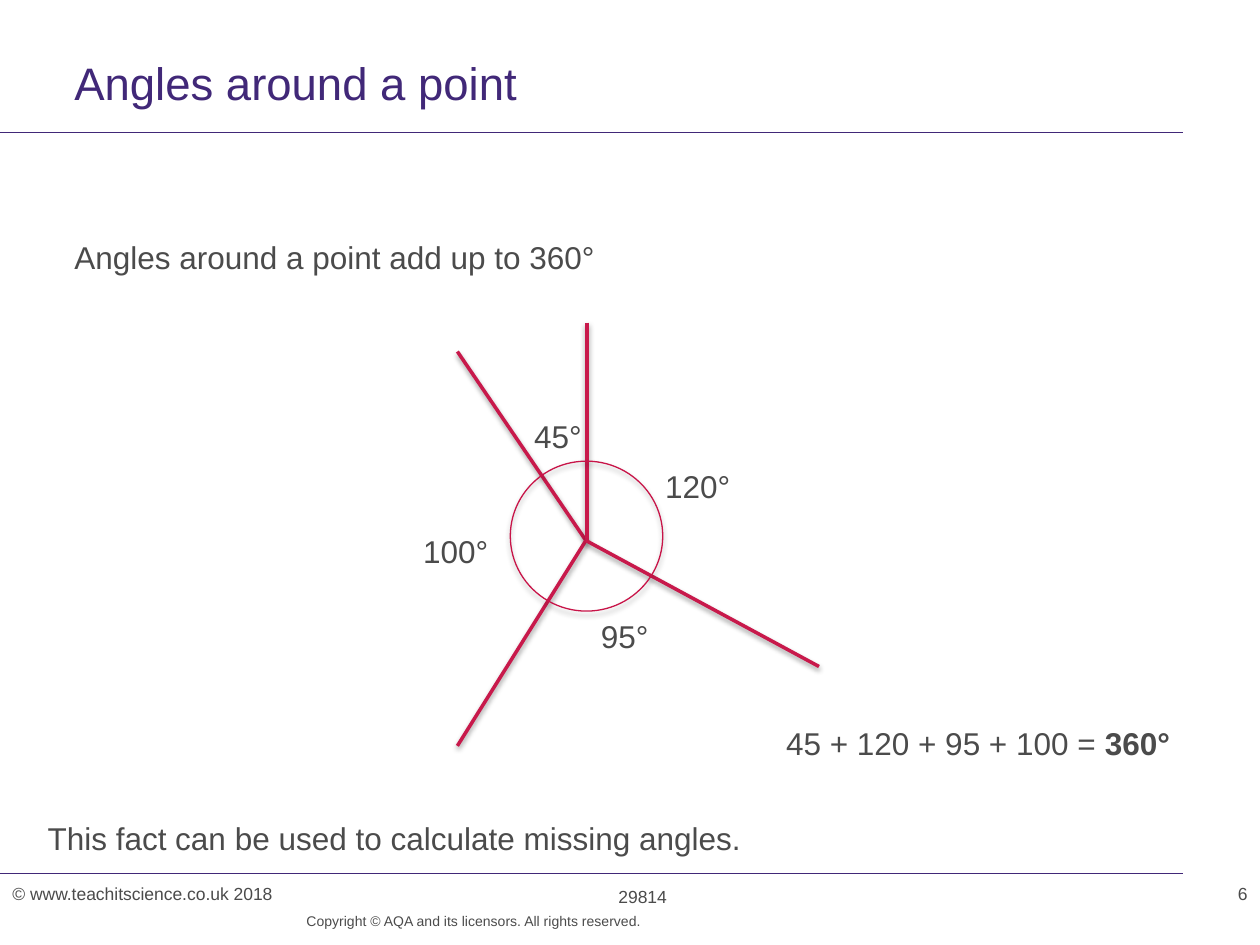
from dataclasses import dataclass

from lxml.etree import SubElement
from pptx import Presentation
from pptx.dml.color import RGBColor
from pptx.enum.shapes import MSO_CONNECTOR as CONN, MSO_SHAPE as SHAPE
from pptx.enum.text import MSO_ANCHOR as ANCHOR, PP_ALIGN as AL
from pptx.oxml.ns import qn
from pptx.util import Emu, Pt

PX = 9144  # 100 px to the inch
FONT = "Arial"
COLORS = {"purple": "412878", "grey": "4B4B4B", "ray": "C8194B",
          "circle": "C81448", "shadow": "000000"}


@dataclass
class Label:
    text: str
    x: int
    y: int
    w: int
    h: int
    size: int = 18
    color: str = "grey"
    align: AL = AL.LEFT
    wrap: bool = True
    insets: tuple[int, int, int, int] = (10, 5, 10, 5)
    spacing: int | None = None
    bold_tail: str = ""


@dataclass
class Line:
    x1: int
    y1: int
    x2: int
    y2: int
    color: str
    width: float
    shadow: bool = False


def px(n: int) -> Emu:
    return Emu(n * PX)


def rgb(name: str) -> RGBColor:
    return RGBColor.from_string(COLORS[name])


def add_effects(sp, shadow: bool, alpha: int = 38, dist: float = 1.6) -> None:
    """Write the effect list: a downward soft shadow, or none."""
    fx = SubElement(sp._element.spPr, qn("a:effectLst"))
    if shadow:
        outer = SubElement(fx, qn("a:outerShdw"), blurRad=str(Pt(3.1)),
                           dist=str(Pt(dist)), dir="5400000", rotWithShape="0")
        clr = SubElement(outer, qn("a:srgbClr"), val=COLORS["shadow"])
        SubElement(clr, qn("a:alpha"), val=str(alpha * 1000))


def draw_line(s, ln: Line) -> None:
    c = s.shapes.add_connector(CONN.STRAIGHT, px(ln.x1), px(ln.y1),
                               px(ln.x2), px(ln.y2))
    c.line.color.rgb = rgb(ln.color)
    c.line.width = Pt(ln.width)
    add_effects(c, ln.shadow)


def draw_label(s, lb: Label) -> None:
    tf = s.shapes.add_textbox(px(lb.x), px(lb.y), px(lb.w), px(lb.h)).text_frame
    tf.word_wrap = lb.wrap
    tf.vertical_anchor = ANCHOR.TOP
    tf.margin_left, tf.margin_top, tf.margin_right, tf.margin_bottom = map(px, lb.insets)
    p = tf.paragraphs[0]
    p.text = lb.text
    p.alignment = lb.align
    if lb.spacing:
        p.line_spacing = Pt(lb.spacing)
    if lb.bold_tail:
        r = p.add_run()
        r.text = lb.bold_tail
        r.font.bold = True
    for r in p.runs:
        r.font.name = FONT
        r.font.size = Pt(lb.size)
        r.font.color.rgb = rgb(lb.color)


def draw_circle(s, x: int, y: int, w: int, h: int) -> None:
    sp = s.shapes.add_shape(SHAPE.OVAL, px(x), px(y), px(w), px(h))
    sp.fill.background()
    sp.line.color.rgb = rgb("circle")
    sp.line.width = Pt(0.75)
    add_effects(sp, True, alpha=35, dist=1.8)


RULES = [Line(0, y, 939, y, "purple", 0.6) for y in (105, 693)]

RAYS = [Line(x1, y1, x2, y2, "ray", 2, shadow=True) for x1, y1, x2, y2 in (
    (363, 279, 465, 429),
    (466, 256, 466, 429),
    (465, 429, 363, 592),
    (465, 429, 650, 529),
)]

FOOTER = [
    Label("© www.teachitscience.co.uk 2018", 0, 696, 382, 27, 10),
    Label("29814", 319, 698, 382, 27, 10, align=AL.CENTER),
    Label("6", 618, 696, 382, 27, 10, align=AL.RIGHT),
    Label("Copyright © AQA and its licensors. All rights reserved.",
          216, 724, 293, 26, 8, align=AL.RIGHT, insets=(0, 0, 0, 0), spacing=10),
]

HEADINGS = [
    Label("Angles around a point", 59, 48, 880, 47, 26, "purple",
          insets=(0, 0, 10, 0), spacing=28),
    Label("Angles around a point add up to 360°", 59, 189, 880, 482,
          insets=(0, 0, 10, 0)),
]

ANGLES = [
    Label("120°", 518, 366, 79, 40),
    Label("100°", 326, 417, 72, 40, wrap=False),
    Label("95°", 467, 485, 58, 40, wrap=False),
    Label("45°", 414, 326, 58, 40, wrap=False),
]

CONCLUSIONS = [
    Label("45 + 120 + 95 + 100 = ", 614, 570, 326, 71, wrap=False, bold_tail="360°"),
    Label("This fact can be used to calculate missing angles.",
          28, 645, 576, 40, wrap=False),
]


def main() -> None:
    prs = Presentation()
    prs.slide_width, prs.slide_height = px(1000), px(750)
    s = prs.slides.add_slide(prs.slide_layouts[6])

    # Rules, footer and headings
    for ln in RULES:
        draw_line(s, ln)
    for lb in FOOTER + HEADINGS:
        draw_label(s, lb)

    # Angle diagram
    for ln in RAYS:
        draw_line(s, ln)
    draw_circle(s, 405, 366, 121, 119)

    # Angle values and conclusions
    for lb in ANGLES + CONCLUSIONS:
        draw_label(s, lb)

    prs.save("out.pptx")


if __name__ == "__main__":
    main()
